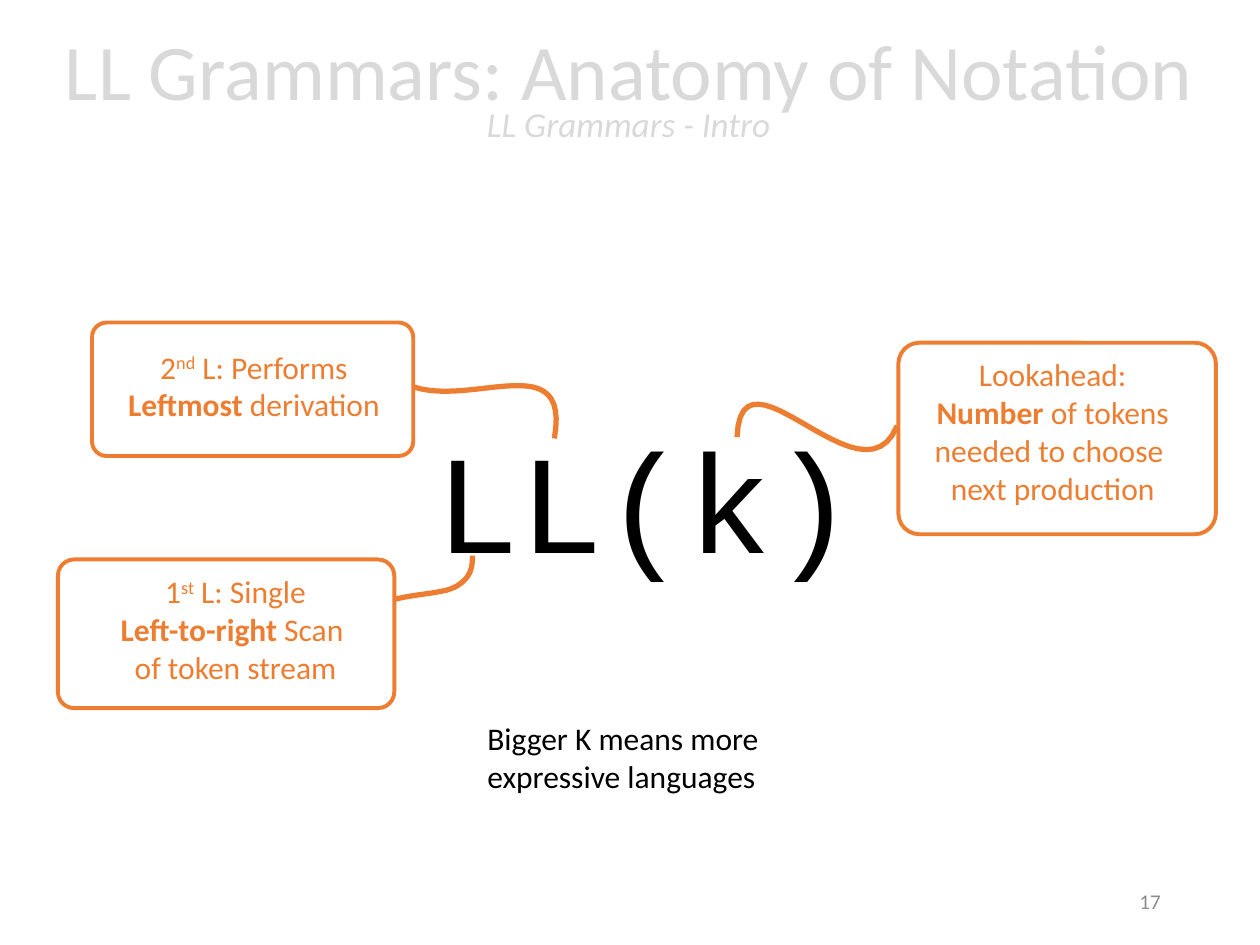
from pptx import Presentation
from pptx.dml.color import RGBColor as RGB
from pptx.enum.shapes import MSO_SHAPE as SHAPE
from pptx.enum.text import MSO_ANCHOR as ANCHOR, PP_ALIGN as ALIGN
from pptx.util import Inches, Pt

THEME = {
    "accent": RGB.from_string("ED7D31"),
    "paper": RGB.from_string("FFFFFF"),
    "title": {"name": "Calibri", "size": Pt(45), "color": RGB.from_string("D9D9D9")},
    "number": {"name": "Calibri", "size": Pt(12), "color": RGB.from_string("8C8C8C")},
    "notation": {"name": "Courier New", "size": Pt(80), "color": RGB.from_string("000000")},
    "callout": {"name": "Calibri", "size": Pt(18), "color": RGB.from_string("ED7D31")},
    "remark": {"name": "Calibri", "size": Pt(18), "color": RGB.from_string("000000")},
}
SUBTITLE = {"size": Pt(20), "italic": True}
BOLD = {"bold": True}
RAISED = {"baseline": "30000"}

prs = Presentation()
prs.slide_width, prs.slide_height = Inches(10), Inches(7.5)
s = prs.slides.add_slide(prs.slide_layouts[6])
COL, ROW = prs.slide_width / 100, prs.slide_height / 75


def grid(x, y, w, h):
    return [round(v * unit) for v, unit in zip((x, y, w, h), (COL, ROW, COL, ROW))]


def add_text(area, style, paragraphs, align=ALIGN.LEFT, spacing=None, **frame):
    tf = s.shapes.add_textbox(*grid(*area)).text_frame
    for key, value in frame.items():
        setattr(tf, key, value)
    for i, runs in enumerate(paragraphs):
        p = tf.add_paragraph() if i else tf.paragraphs[0]
        p.alignment, p.line_spacing = align, spacing
        for text, extra in runs:
            if text == "\n":
                p.add_line_break()
                continue
            r = p.add_run()
            r.text = text
            for key, value in {**THEME[style], **extra}.items():
                if key == "color":
                    r.font.color.rgb = value
                elif key == "baseline":
                    r._r.get_or_add_rPr().set(key, value)
                else:
                    setattr(r.font, key, value)


CURVES = [
    [(28.3, 54.7), (28.3, 52.2), (28.3, 49.8), (29.6, 48.4), (30.9, 47.1), (34.8, 47.3),
     (36.1, 46.6), (37.4, 45.9), (37.5, 45), (37.5, 44.1)],
    [(32.8, 30.7), (37.6, 32.3), (45.3, 27.5), (44, 34.8)],
    [(71.2, 33.8), (68.5, 40.5), (58.8, 26.6), (58.5, 34.7)],
]
STEPS = 24
for curve in CURVES:
    points = []
    for start in range(0, len(curve) - 1, 3):
        for step in range(STEPS + 1):
            t = step / STEPS
            weights = (1 - t) ** 3, 3 * t * (1 - t) ** 2, 3 * t * t * (1 - t), t ** 3
            xs, ys = zip(*curve[start:start + 4])
            points.append((round(COL * sum(w * x for w, x in zip(weights, xs))),
                           round(ROW * sum(w * y for w, y in zip(weights, ys)))))
    builder = s.shapes.build_freeform(*points[0])
    builder.add_line_segments(points[1:], close=False)
    sp = builder.convert_to_shape()
    sp.shadow.inherit = False
    sp.fill.background()
    sp.line.color.rgb, sp.line.width = THEME["accent"], Pt(3)

CALLOUTS = [
    ((71.3, 27.2, 25.2, 15.2), (71.7, 27.7, 23.7, 13.1),
     [[("Lookahead:", {})], [("Number", BOLD), (" of tokens", {})],
      [("needed to choose ", {})], [("next production", {})]]),
    ((4.6, 44.4, 26.7, 11.8), (6.1, 44.9, 25.2, 10.1),
     [[("1", {}), ("st", RAISED), (" L: Single", {})],
      [("Left-to-right", BOLD), (" Scan ", {})], [("of token stream", {})]]),
    ((7.3, 25.6, 25.5, 10.6), (7.4, 27.1, 25.5, 7.1),
     [[("2", {}), ("nd", RAISED), (" L: Performs", {})],
      [("Leftmost ", BOLD), ("derivation", {})]]),
]
for box, area, paragraphs in CALLOUTS:
    sp = s.shapes.add_shape(SHAPE.ROUNDED_RECTANGLE, *grid(*box))
    sp.adjustments[0] = 0.11
    sp.shadow.inherit = False
    sp.fill.solid()
    sp.fill.fore_color.rgb = THEME["paper"]
    sp.line.color.rgb, sp.line.width = THEME["accent"], Pt(2.25)
    add_text(area, "callout", paragraphs, ALIGN.CENTER, word_wrap=False)

add_text((1.2, 0.3, 97.4, 14.5), "title",
         [[("LL Grammars: Anatomy of Notation", {}), ("\n", {}), ("LL Grammars - Intro", SUBTITLE)]],
         ALIGN.CENTER, 0.7, word_wrap=True, vertical_anchor=ANCHOR.MIDDLE)
add_text((70.6, 69.5, 22.5, 4), "number", [[("17", {})]], ALIGN.RIGHT,
         word_wrap=True, vertical_anchor=ANCHOR.MIDDLE)
add_text((33.6, 32.3, 35.7, 14.5), "notation", [[("LL(k)", {})]], word_wrap=False)
add_text((37.7, 56.6, 24.4, 7.1), "remark",
         [[("Bigger K means more", {})], [("expressive languages", {})]], word_wrap=False)

prs.save("out.pptx")
